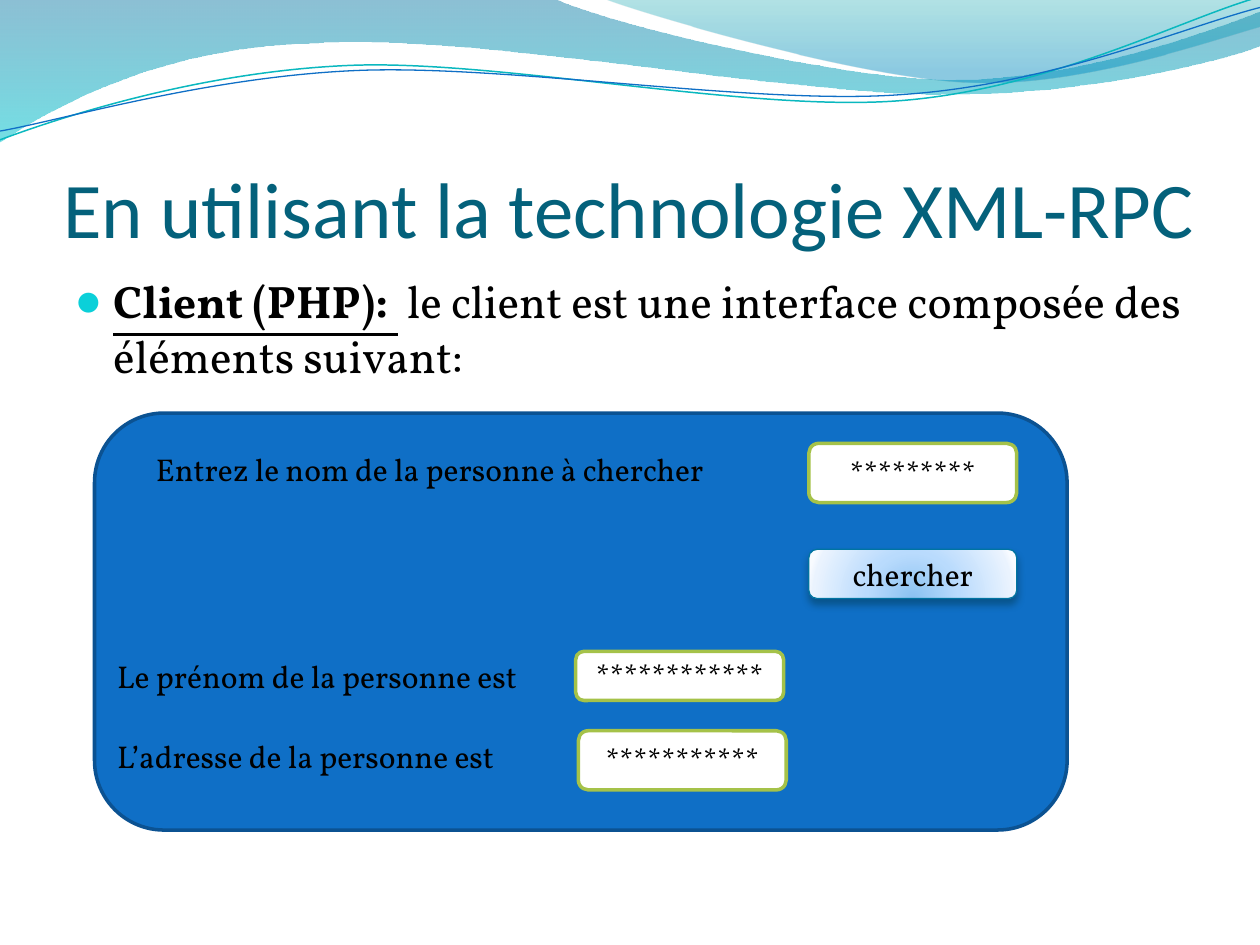
from math import cos, radians, sin

from lxml import etree
from pptx import Presentation
from pptx.dml.color import RGBColor
from pptx.enum.shapes import MSO_SHAPE
from pptx.enum.text import MSO_ANCHOR, MSO_AUTO_SIZE, PP_ALIGN
from pptx.oxml import parse_xml
from pptx.oxml.ns import nsdecls, qn
from pptx.util import Pt

BLACK = RGBColor(0x00, 0x00, 0x00)
WHITE = RGBColor(0xFF, 0xFF, 0xFF)
TITLE_TEAL = RGBColor(0x04, 0x61, 0x7B)
BULLET_CYAN = RGBColor(0x0B, 0xD0, 0xD9)
PANEL_BLUE = RGBColor(0x0F, 0x6F, 0xC6)
PANEL_EDGE = RGBColor(0x0B, 0x52, 0x92)
FIELD_GREEN = RGBColor(0xA5, 0xC2, 0x49)
WAVE_TEAL = RGBColor(0x0A, 0xB8, 0xBF)
DEEP_TEAL = RGBColor(0x00, 0x74, 0xA1)
TURQUOISE = RGBColor(0x00, 0xC6, 0xCF)
SEA_GREEN = RGBColor(0x00, 0xA1, 0xA9)
SEA_BLUE = RGBColor(0x00, 0x8B, 0xBF)
BUTTON_SHADOW = RGBColor(0x00, 0x37, 0x4C)
BUTTON_STOPS = [
    (0, RGBColor(0x8B, 0xC2, 0xF1), 100), (43, RGBColor(0xB9, 0xDB, 0xFD), 100),
    (93, RGBColor(0xEA, 0xF3, 0xFE), 100), (100, RGBColor(0xF8, 0xFB, 0xFF), 100)]
DOWNWARD = '<a:lin ang="5400000" scaled="0"/>'
CIRCULAR = ('<a:path path="circle"><a:fillToRect l="50000" t="130000" '
            'r="50000" b="-30000"/></a:path>')
SANS, SERIF = "Calibri", "Vollkorn"

TITLE = "En utilisant la technologie XML-RPC"
# text, bold, underlined
INTRO = [("Client (PHP): ", True, True), (" ", True, False),
         ("le client est une interface composée des éléments suivant:", False, False)]

# A step with one point is a line, a step with three points is a Bézier curve.
BANDS = [
    ([[(0, 0)],
      [(316.8, -0.7)],
      [(342.7, 12.2), (478, 45.4), (545.8, 45.4)],
      [(614.2, 45.4), (689.8, 18.7), (720, 6.5)],
      [(720.7, 25.9)],
      [(707.8, 31.7), (626.4, 54.7), (537.1, 54)],
      [(447.8, 54), (275, 20.2), (185, 24.5)],
      [(92.9, 25.9), (33.1, 59.8), (-0.7, 81.4)]],
     [(0, DEEP_TEAL, 45), (100, TURQUOISE, 55)]),
    ([[(344.9, -0.7)],
      [(366.5, 7.9), (491, 44.6), (553.7, 46.8)],
      [(616.3, 49.7), (691.9, 23), (720, 15.1)],
      [(720, 0)]],
     [(0, SEA_GREEN, 30), (80, SEA_BLUE, 45)]),
]
WAVE_TILT = -2.7
# steps, centre of the tilt, colour, width
WAVE_LINES = [
    ([[(0, 79.9)],
      [(34.6, 67), (113.8, 41), (199.4, 37.4)],
      [(284.4, 33.8), (427, 64.1), (513.4, 57.6)],
      [(599.8, 51.1), (675.4, 10.8), (718.6, -1.4)]], (359.3, 41.4), WAVE_TEAL, 0.85),
    ([[(0, 74.9)],
      [(33.8, 69.1), (118.1, 43.9), (203.8, 40.3)],
      [(290.2, 36.7), (433.4, 60.5), (516.2, 54)],
      [(601.9, 48.2), (677.5, 15.1), (720, 4.3)]], (359.6, 42.5), PANEL_BLUE, 0.75),
]

PANEL = (54, 236, 555.8, 238.3)
FIELD_WIDTH, LABEL_HEIGHT = 118.8, 28.8
# text, left, top, height
FIELDS = [("*********", 462.2, 253.4, 33.8),
          ("************", 329, 372.2, 28.1),
          ("***********", 330.5, 417.6, 33.8)]
BUTTON = ("chercher", 462.2, 313.9, 28.1)
# text, left, top, width
LABELS = [("Entrez le nom de la personne à chercher", 82, 253.4, 367.2),
          ("Le prénom de la personne est", 59.8, 372.2, 249),
          ("L’adresse de la personne est", 59.8, 417.6, 249)]


def turn(point, centre, degrees):
    dx, dy = point[0] - centre[0], point[1] - centre[1]
    c, s = cos(radians(degrees)), sin(radians(degrees))
    return centre[0] + dx * c - dy * s, centre[1] + dx * s + dy * c


def add_outline(shapes, steps, close):
    """Draw the steps, then join each group of three points into a curve."""
    first, *rest = [(Pt(x), Pt(y)) for step in steps for x, y in step]
    builder = shapes.build_freeform(*first)
    builder.add_line_segments(rest, close=close)
    outline = builder.convert_to_shape()
    outline.shadow.inherit = False
    segments = iter(list(outline._element.iter(qn("a:lnTo"))))
    for step in steps[1:]:
        segment, *others = [next(segments) for _ in step]
        if others:
            segment.tag = qn("a:cubicBezTo")
        for other in others:
            segment.append(other[0])
            other.getparent().remove(other)
    return outline


def fill_gradient(shape, stops, direction):
    shape.fill.background()
    stop_xml = "".join(
        f'<a:gs pos="{pos * 1000}"><a:srgbClr val="{color}">'
        f'<a:alpha val="{alpha * 1000}"/></a:srgbClr></a:gs>'
        for pos, color, alpha in stops)
    gradient = parse_xml(f'<a:gradFill {nsdecls("a")} rotWithShape="1">'
                         f'<a:gsLst>{stop_xml}</a:gsLst>{direction}</a:gradFill>')
    properties = shape._element.spPr
    properties.replace(properties.find(qn("a:noFill")), gradient)


def set_line(shape, color, width):
    shape.line.color.rgb = color
    shape.line.width = Pt(width)


def add_run(paragraph, text, size, font=SERIF, color=BLACK, bold=None, underline=None):
    run = paragraph.add_run()
    run.text = text
    run.font.name, run.font.size = font, Pt(size)
    run.font.color.rgb = color
    run.font.bold, run.font.underline = bold, underline


def add_rounded(shapes, box, edge, width, text=""):
    rounded = shapes.add_shape(MSO_SHAPE.ROUNDED_RECTANGLE, *map(Pt, box))
    rounded.shadow.inherit = False
    set_line(rounded, edge, width)
    if text:
        frame = rounded.text_frame
        frame.vertical_anchor = MSO_ANCHOR.MIDDLE
        frame.paragraphs[0].alignment = PP_ALIGN.CENTER
        add_run(frame.paragraphs[0], text, 18)
    return rounded


def add_text_box(shapes, *box):
    frame = shapes.add_textbox(*map(Pt, box)).text_frame
    frame.word_wrap = True
    return frame


def add_bullet(paragraph):
    properties = paragraph._p.get_or_add_pPr()
    properties.set("marL", str(Pt(21.6)))
    properties.set("indent", str(-Pt(21.6)))
    color = etree.SubElement(properties, qn("a:buClr"))
    etree.SubElement(color, qn("a:srgbClr"), val=str(BULLET_CYAN))
    etree.SubElement(properties, qn("a:buSzPct"), val="95000")
    etree.SubElement(properties, qn("a:buFont"), typeface=SANS)
    etree.SubElement(properties, qn("a:buChar"), char="●")


def add_button_shadow(button):
    effects = button._element.spPr.find(qn("a:effectLst"))
    effects.append(parse_xml(
        f'<a:outerShdw {nsdecls("a")} blurRad="{Pt(4.5)}" dist="{Pt(3)}" dir="5400000" '
        f'rotWithShape="0"><a:srgbClr val="{BUTTON_SHADOW}"><a:alpha val="48000"/>'
        '</a:srgbClr></a:outerShdw>'))


def main():
    prs = Presentation()
    prs.slide_width, prs.slide_height = Pt(720), Pt(540)
    slide = prs.slides.add_slide(prs.slide_layouts[5])
    shapes = slide.shapes

    for steps, stops in BANDS:
        band = add_outline(shapes, steps, close=True)
        fill_gradient(band, stops, DOWNWARD)
        band.line.fill.background()
    for steps, centre, color, width in WAVE_LINES:
        level = [[turn(point, centre, -WAVE_TILT) for point in step] for step in steps]
        wave = add_outline(shapes, level, close=False)
        wave.rotation = WAVE_TILT
        wave.fill.background()
        set_line(wave, color, width)

    title = shapes.title
    shapes._spTree.append(title._element)  # in front of the waves
    title.left, title.top, title.width, title.height = map(Pt, (36, 55.4, 648, 90))
    frame = title.text_frame
    frame.auto_size, frame.word_wrap = MSO_AUTO_SIZE.NONE, True
    frame.vertical_anchor = MSO_ANCHOR.BOTTOM
    frame.margin_left = frame.margin_right = frame.margin_bottom = 0
    frame.margin_top = Pt(3.6)
    frame.paragraphs[0].alignment = PP_ALIGN.LEFT
    add_run(frame.paragraphs[0], TITLE, 45, SANS, TITLE_TEAL)

    intro = add_text_box(shapes, 36, 152.6, 648, 345.6).paragraphs[0]
    add_bullet(intro)
    for text, bold, underline in INTRO:
        add_run(intro, text, 26, bold=bold, underline=underline)

    panel = add_rounded(shapes, PANEL, PANEL_EDGE, 2)
    panel.fill.solid()
    panel.fill.fore_color.rgb = PANEL_BLUE
    for text, left, top, height in FIELDS:
        field = add_rounded(shapes, (left, top, FIELD_WIDTH, height), FIELD_GREEN, 2, text)
        field.fill.solid()
        field.fill.fore_color.rgb = WHITE
    text, left, top, height = BUTTON
    button = add_rounded(shapes, (left, top, FIELD_WIDTH, height), DEEP_TEAL, 0.75, text)
    fill_gradient(button, BUTTON_STOPS, CIRCULAR)
    add_button_shadow(button)
    for text, left, top, width in LABELS:
        label = add_text_box(shapes, left, top, width, LABEL_HEIGHT)
        add_run(label.paragraphs[0], text, 18)

    prs.save("out.pptx")


if __name__ == "__main__":
    main()
